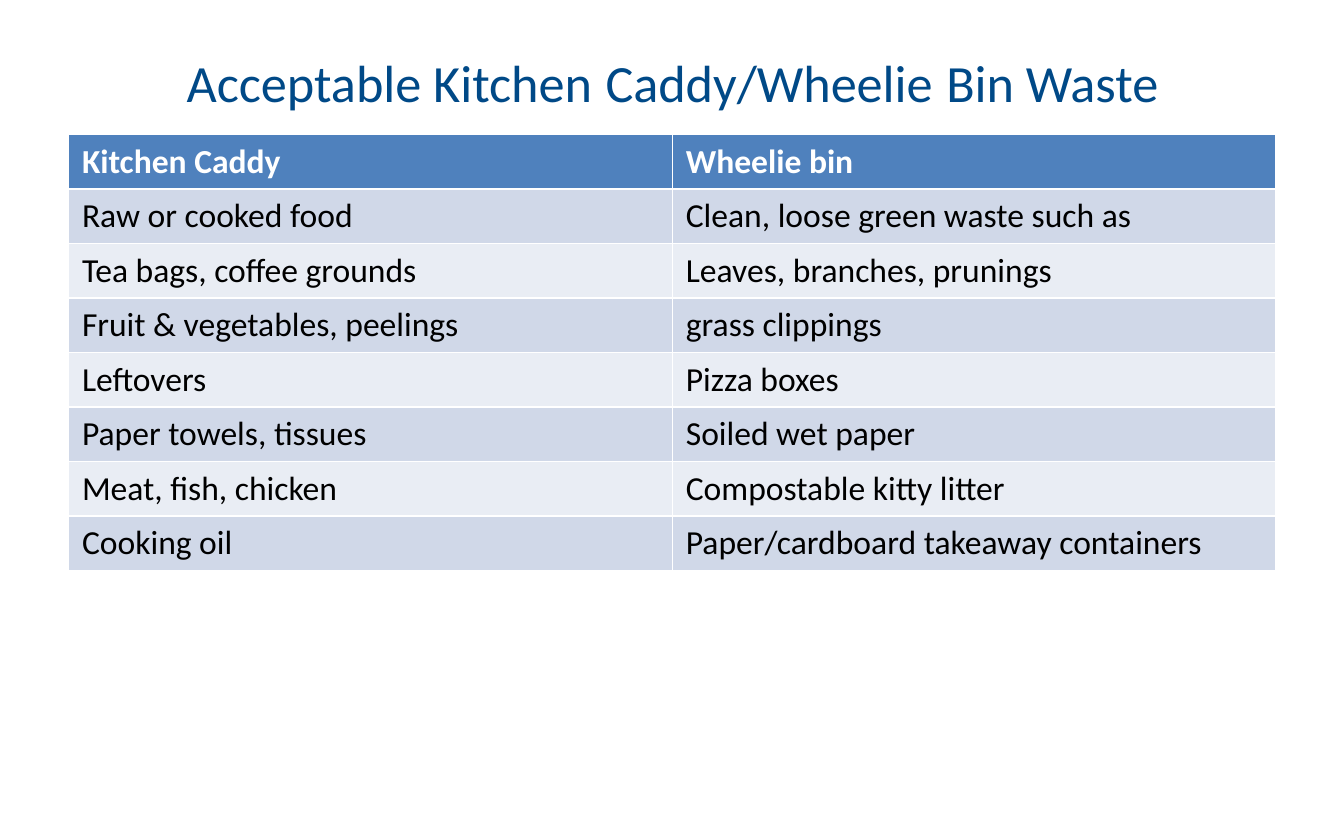
"""Build a slide that lists acceptable waste for the kitchen caddy and wheelie bin."""
from dataclasses import dataclass

from pptx import Presentation
from pptx.dml.color import RGBColor
from pptx.enum import text
from pptx.util import Pt


@dataclass(frozen=True)
class Theme:
    font: str = "Calibri"
    title: str = "004987"
    header: str = "4F81BD"
    header_text: str = "FFFFFF"
    body_text: str = "000000"
    bands: tuple = ("D0D8E8", "E9EDF4")
    title_size: int = 28
    space_size: int = 32
    table_size: int = 18


def style(span, size, color, bold=False):
    span.font.name = theme.font
    span.font.size = Pt(size)
    span.font.bold = bold
    span.font.color.rgb = RGBColor.from_string(color)


theme = Theme()
left, width, row_height = 36.75, 647, 29.2
title_parts = ["Acceptable Kitchen", " ", "Caddy/Wheelie", " ", "Bin Waste"]
rows = [
    ("Kitchen Caddy", "Wheelie bin"),
    ("Raw or cooked food", "Clean, loose green waste such as"),
    ("Tea bags, coffee grounds", "Leaves, branches, prunings"),
    ("Fruit & vegetables, peelings", "grass clippings"),
    ("Leftovers", "Pizza boxes"),
    ("Paper towels, tissues", "Soiled wet paper"),
    ("Meat, fish, chicken", "Compostable kitty litter"),
    ("Cooking oil", "Paper/cardboard takeaway containers"),
]

deck = Presentation()
deck.slide_width, deck.slide_height = Pt(720), Pt(450)
page = deck.slides.add_slide(deck.slide_layouts.get_by_name("Title Only"))

title = page.shapes.title
title.left, title.top, title.width, title.height = Pt(left), Pt(18), Pt(width), Pt(48)
title.text_frame.vertical_anchor = text.MSO_ANCHOR.MIDDLE
para = title.text_frame.paragraphs[0]
para.alignment = text.PP_ALIGN.CENTER
for part in title_parts:
    span = para.add_run()
    span.text = part
    style(span, theme.space_size if part == " " else theme.title_size, theme.title)

table = page.shapes.add_table(
    len(rows), 2, Pt(left), Pt(72), Pt(width), Pt(row_height * len(rows))
).table
for row_index, row in enumerate(rows):
    table.rows[row_index].height = Pt(row_height)
    is_header = row_index == 0
    fill = theme.header if is_header else theme.bands[(row_index - 1) % 2]
    color = theme.header_text if is_header else theme.body_text
    for column_index, words in enumerate(row):
        cell = table.cell(row_index, column_index)
        cell.fill.solid()
        cell.fill.fore_color.rgb = RGBColor.from_string(fill)
        cell.text_frame.text = words
        style(cell.text_frame.paragraphs[0].runs[0], theme.table_size, color, is_header)

deck.save("out.pptx")
